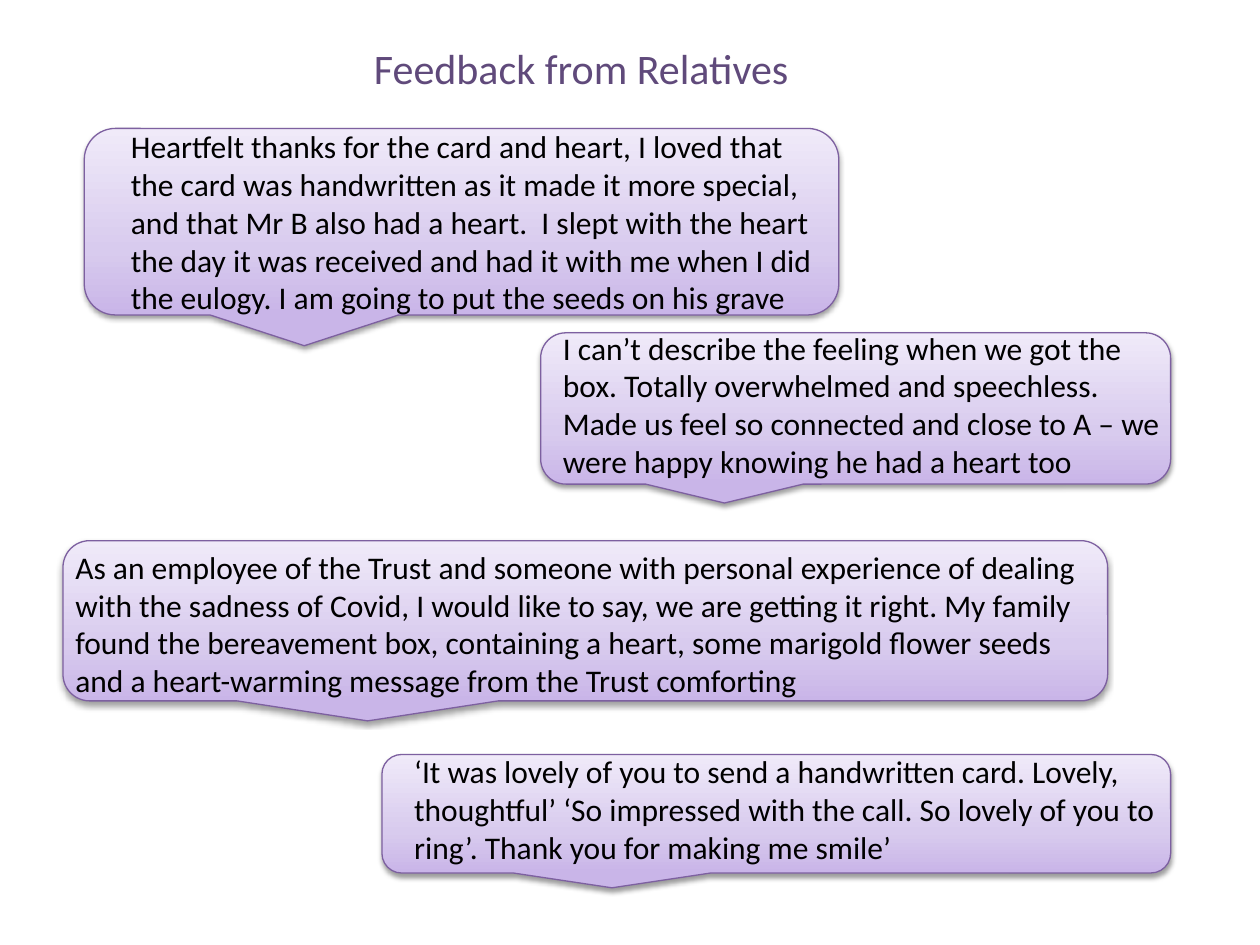
from copy import deepcopy

from lxml.etree import SubElement as Sub
from pptx import Presentation
from pptx.dml.color import RGBColor
from pptx.enum.shapes import MSO_SHAPE as Shape
from pptx.enum.text import MSO_AUTO_SIZE as Fit
from pptx.oxml.ns import qn
from pptx.util import Cm, Pt

BLACK = RGBColor(0x00, 0x00, 0x00)
PLUM = RGBColor(0x60, 0x4A, 0x7B)
EDGE = RGBColor(0x7D, 0x60, 0xA0)
DEEP = RGBColor(0xC9, 0xB5, 0xE8)
MID = RGBColor(0xD8, 0xCB, 0xEE)
PALE = RGBColor(0xF0, 0xEA, 0xF9)
STOPS = ((0, DEEP), (0.35, MID), (1, PALE))

# Callout box, pointer depth, text box (cm), words
QUOTES = (
    ((1.7, 2.59, 15.21, 3.76), 0.665, (2.39, 2.44, 14.55, 4.11),
     "Heartfelt thanks for the card and heart, I loved that the card was "
     "handwritten as it made it more special, and that Mr B also had a heart.  "
     "I slept with the heart the day it was received and had it with me when "
     "I did the eulogy. I am going to put the seeds on his grave"),
    ((10.9, 6.71, 12.7, 3.05), 0.625, (11.1, 6.5, 12.7, 3.33),
     "I can’t describe the feeling when we got the box. Totally overwhelmed "
     "and speechless. Made us feel so connected and close to A – we were "
     "happy knowing he had a heart too"),
    ((1.27, 10.9, 21.06, 3.23), 0.625, (1.27, 10.92, 21.06, 3.33),
     "As an employee of the Trust and someone with personal experience of "
     "dealing with the sadness of Covid, I would like to say, we are getting "
     "it right. My family found the bereavement box, containing a heart, some "
     "marigold flower seeds and a heart-warming message from the Trust "
     "comforting"),
    ((7.7, 15.21, 15.9, 2.39), 0.625, (8.1, 15.04, 16.13, 2.57),
     "‘It was lovely of you to send a handwritten card. Lovely, thoughtful’ "
     "‘So impressed with the call. So lovely of you to ring’. Thank you for "
     "making me smile’"),
)


class Page:
    def __init__(self, slide, font="Calibri"):
        self.slide = slide
        self.font = font

    def bubble(self, box, depth):
        shape = self.slide.shapes.add_shape(
            Shape.ROUNDED_RECTANGULAR_CALLOUT, *map(Cm, box))
        shape.adjustments[1] = depth
        shape.line.color.rgb = EDGE
        shape.line.width = Pt(0.75)
        self.blend(shape.fill)
        self.shade(shape)

    def blend(self, fill):
        fill.gradient()
        fill.gradient_angle = 90
        # Add the third stop
        first = fill._fill._gradFill.find(qn("a:gsLst"))
        first.append(deepcopy(first[0]))
        for stop, (pos, tint) in zip(fill.gradient_stops, STOPS):
            stop.position = pos
            stop.color.rgb = tint

    def shade(self, shape):
        shape.shadow.inherit = False
        effects = shape._element.spPr.find(qn("a:effectLst"))
        outer = Sub(effects, qn("a:outerShdw"), blurRad=str(Pt(3.1)),
                    dist=str(Pt(1.6)), dir="5400000", rotWithShape="0")
        color = Sub(outer, qn("a:srgbClr"), val="000000")
        Sub(color, qn("a:alpha"), val="38000")

    def text(self, box, words, size=18, color=BLACK):
        frame = self.slide.shapes.add_textbox(*map(Cm, box)).text_frame
        frame.word_wrap = True
        frame.auto_size = Fit.SHAPE_TO_FIT_TEXT
        run = frame.paragraphs[0].add_run()
        run.text = words
        run.font.name = self.font
        run.font.size = Pt(size)
        run.font.color.rgb = color


def main():
    deck = Presentation()
    deck.slide_width, deck.slide_height = Cm(25.4), Cm(19.05)
    page = Page(deck.slides.add_slide(deck.slide_layouts[6]))

    # Title
    page.text((7.29, 0.74, 8.99, 1.27), "Feedback from Relatives", 24, PLUM)

    # Quotes
    for box, depth, area, words in QUOTES:
        page.bubble(box, depth)
        page.text(area, words)

    deck.save("out.pptx")


if __name__ == "__main__":
    main()
